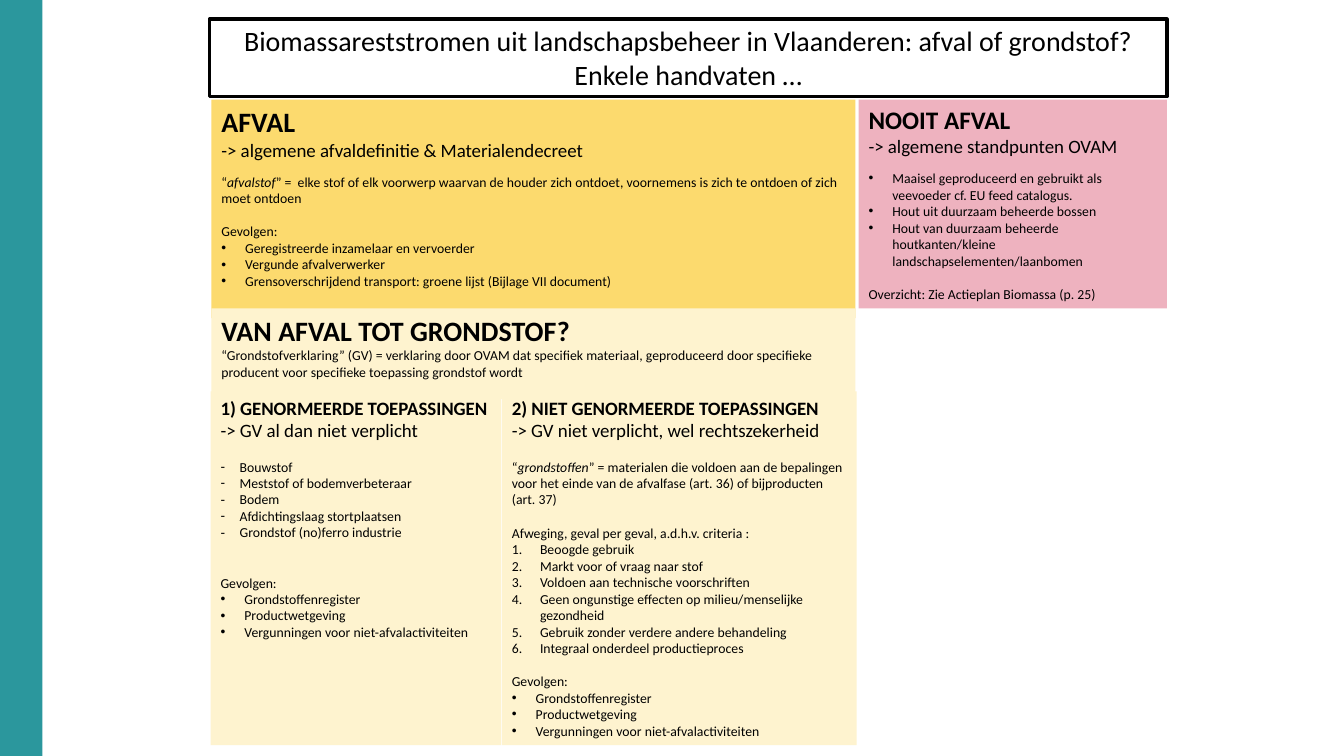
import pptx
import pptx.dml.color
import pptx.enum.shapes
import pptx.enum.text
import pptx.oxml.ns
import pptx.util
from lxml import etree
from pptx.util import Cm, Pt

COLORS = {
    "teal": "2B979D",
    "yellow": "FCDA6E",
    "cream": "FEF3CF",
    "pink": "EEB2BF",
    "black": "000000",
}
FONT = "Calibri"
BIG, MEDIUM, SMALL = 20, 13.5, 9.8
LINE = 12  # height of one line of small text, in points
INDENTS = {"•": 0.6, "-": 0.48, "1.": 0.71}
CONSEQUENCES = [
    "Grondstoffenregister",
    "Productwetgeving",
    "Vergunningen voor niet-afvalactiviteiten",
]


def rgb(name):
    return pptx.dml.color.RGBColor.from_string(COLORS[name])


def add_panel(s, box, fill=None):
    """Add a rectangle at box (left, top, width, height in cm)."""
    sp = s.shapes.add_shape(
        pptx.enum.shapes.MSO_SHAPE.RECTANGLE, *(Cm(v) for v in box))
    sp.shadow.inherit = False
    sp.line.fill.background()
    if fill:
        sp.fill.solid()
        sp.fill.fore_color.rgb = rgb(fill)
    else:
        sp.fill.background()
    tf = sp.text_frame
    tf.word_wrap = True
    tf.vertical_anchor = pptx.enum.text.MSO_ANCHOR.TOP
    return sp


def set_bullet(p, mark):
    pPr = p._p.get_or_add_pPr()
    indent = Cm(INDENTS[mark])
    pPr.set("marL", str(indent))
    pPr.set("indent", str(-indent))
    font = etree.SubElement(pPr, pptx.oxml.ns.qn("a:buFont"))
    font.set("typeface", FONT if mark == "1." else "Arial")
    if mark == "1.":
        number = etree.SubElement(pPr, pptx.oxml.ns.qn("a:buAutoNum"))
        number.set("type", "arabicPeriod")
    else:
        char = etree.SubElement(pPr, pptx.oxml.ns.qn("a:buChar"))
        char.set("char", mark)


def add_text(tf, text, size=SMALL, bold=False, gap=0, mark=None,
             align=pptx.enum.text.PP_ALIGN.LEFT):
    """Add a paragraph; text between underscores is italic."""
    first = tf.paragraphs[0]
    p = tf.add_paragraph() if first.runs else first
    if mark:
        set_bullet(p, mark)
    p.alignment = align
    if gap:
        p.space_before = Pt(gap)
    for i, part in enumerate(text.split("_")):
        r = p.add_run()
        r.text = part
        r.font.name = FONT
        r.font.size = Pt(size)
        r.font.bold = bold
        r.font.italic = i % 2 == 1
        r.font.color.rgb = rgb("black")


def add_list(tf, items, mark="•", gap=0):
    for i, item in enumerate(items):
        add_text(tf, item, mark=mark, gap=0 if i else gap)


def add_heading(tf, heading, subheading, size=MEDIUM):
    add_text(tf, heading, size, bold=True)
    add_text(tf, subheading, MEDIUM)


def add_title(s, box):
    sp = add_panel(s, box)
    sp.line.color.rgb = rgb("black")
    sp.line.width = Pt(2.25)
    for text in (
        "Biomassareststromen uit landschapsbeheer in Vlaanderen: afval of grondstof?",
        "Enkele handvaten …",
    ):
        add_text(sp.text_frame, text, BIG,
                 align=pptx.enum.text.PP_ALIGN.CENTER)


def add_waste(s, box):
    tf = add_panel(s, box, "yellow").text_frame
    add_heading(tf, "AFVAL",
                "-> algemene afvaldefinitie & Materialendecreet", BIG)
    add_text(tf, "“_afvalstof_” =  elke stof of elk voorwerp waarvan de houder "
             "zich ontdoet, voornemens is zich te ontdoen of zich moet ontdoen",
             gap=9)
    add_text(tf, "Gevolgen:", gap=LINE)
    add_list(tf, [
        "Geregistreerde inzamelaar en vervoerder",
        "Vergunde afvalverwerker",
        "Grensoverschrijdend transport: groene lijst (Bijlage VII document)",
    ])


def add_never_waste(s, box):
    tf = add_panel(s, box, "pink").text_frame
    add_heading(tf, "NOOIT AFVAL", "-> algemene standpunten OVAM", 18)
    add_list(tf, [
        "Maaisel geproduceerd en gebruikt als veevoeder cf. EU feed catalogus.",
        "Hout uit duurzaam beheerde bossen",
        "Hout van duurzaam beheerde houtkanten/kleine "
        "landschapselementen/laanbomen",
    ], gap=9)
    add_text(tf, "Overzicht: Zie Actieplan Biomassa (p. 25)", gap=LINE)


def add_resource_intro(s, box):
    tf = add_panel(s, box, "cream").text_frame
    add_text(tf, "VAN AFVAL TOT GRONDSTOF?", BIG, bold=True)
    add_text(tf, "“Grondstofverklaring” (GV) = verklaring door OVAM dat "
             "specifiek materiaal, geproduceerd door specifieke producent "
             "voor specifieke toepassing grondstof wordt")


def add_standard_uses(s, box):
    tf = add_panel(s, box, "cream").text_frame
    add_heading(tf, "1) GENORMEERDE TOEPASSINGEN",
                "-> GV al dan niet verplicht")
    add_list(tf, [
        "Bouwstof",
        "Meststof of bodemverbeteraar",
        "Bodem",
        "Afdichtingslaag stortplaatsen",
        "Grondstof (no)ferro industrie",
    ], mark="-", gap=LINE)
    add_text(tf, "Gevolgen:", gap=2 * LINE)
    add_list(tf, CONSEQUENCES)


def add_other_uses(s, box):
    tf = add_panel(s, box, "cream").text_frame
    add_heading(tf, "2) NIET GENORMEERDE TOEPASSINGEN",
                "-> GV niet verplicht, wel rechtszekerheid")
    add_text(tf, "“_grondstoffen_” = materialen die voldoen aan de bepalingen "
             "voor het einde van de afvalfase (art. 36) of bijproducten "
             "(art. 37)", gap=LINE)
    add_text(tf, "Afweging, geval per geval, a.d.h.v. criteria :", gap=LINE)
    add_list(tf, [
        "Beoogde gebruik",
        "Markt voor of vraag naar stof",
        "Voldoen aan technische voorschriften",
        "Geen ongunstige effecten op milieu/menselijke gezondheid",
        "Gebruik zonder verdere andere behandeling",
        "Integraal onderdeel productieproces",
    ], mark="1.")
    add_text(tf, "Gevolgen:", gap=LINE)
    add_list(tf, CONSEQUENCES)


def main():
    prs = pptx.Presentation()
    prs.slide_width, prs.slide_height = Cm(33.87), Cm(19.05)
    s = prs.slides.add_slide(prs.slide_layouts[6])
    add_panel(s, (0, 0, 1.07, 19.05), "teal")
    add_title(s, (5.28, 0.48, 24.13, 1.96))
    add_other_uses(s, (12.65, 9.86, 8.94, 8.92))
    add_waste(s, (5.33, 2.51, 16.23, 5.51))
    add_never_waste(s, (21.64, 2.51, 7.77, 5.26))
    add_standard_uses(s, (5.31, 9.86, 7.32, 8.92))
    add_resource_intro(s, (5.33, 7.77, 16.23, 2.29))
    prs.save("out.pptx")


if __name__ == "__main__":
    main()
